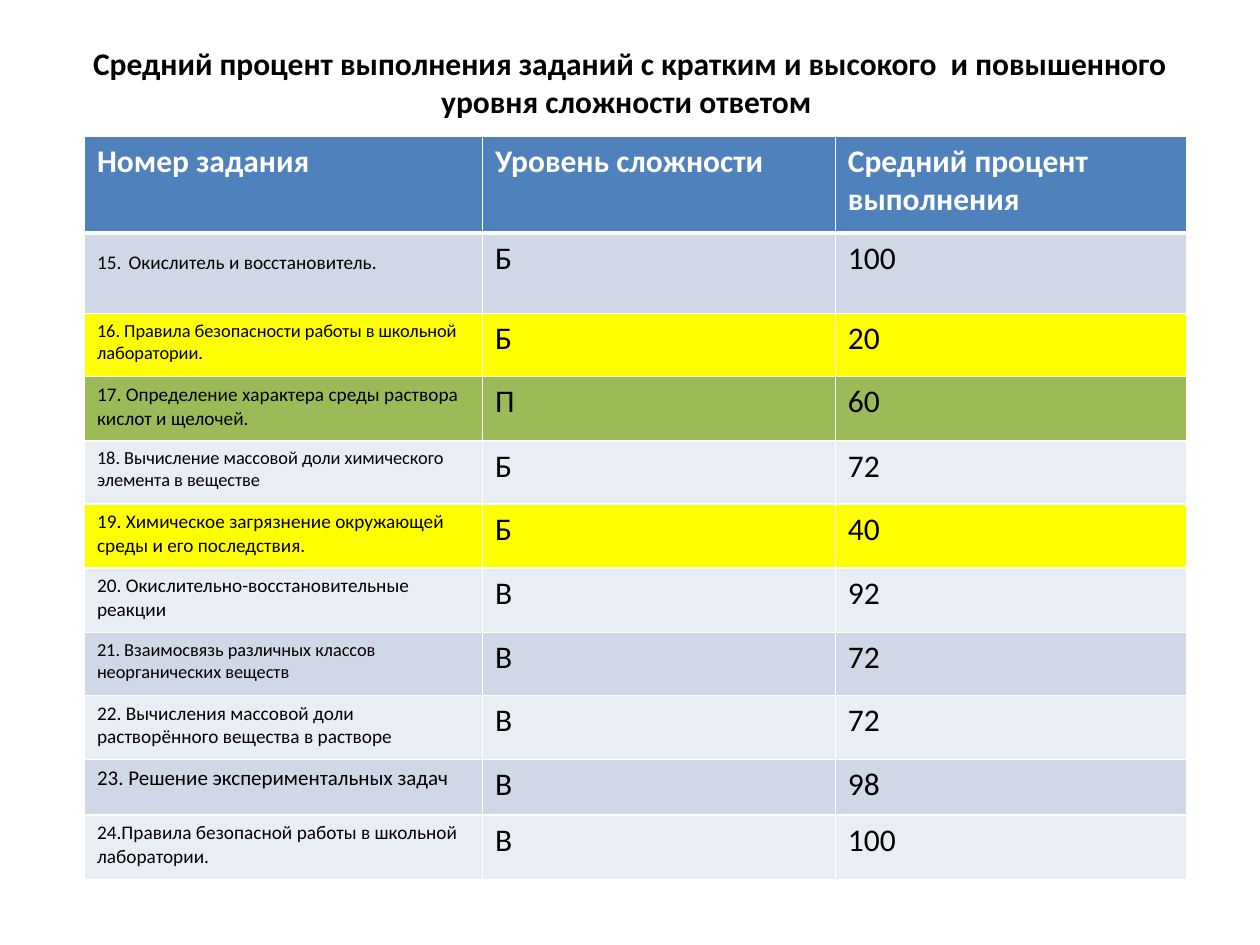
from dataclasses import dataclass

from lxml import etree
from pptx import Presentation
from pptx.dml.color import RGBColor
from pptx.enum import text
from pptx.oxml import ns
from pptx.util import Inches, Pt


@dataclass(frozen=True)
class Theme:
    font: str = "Calibri"
    size: float = 18
    black: str = "000000"
    white: str = "FFFFFF"
    head: str = "4F81BD"
    bands: tuple = ("D0D8E8", "E9EDF4")
    low: str = "FFFF00"
    raised: str = "9BBB59"


THEME = Theme()
TITLE = ("Средний процент выполнения заданий с кратким и высокого  "
         "и повышенного уровня сложности ответом ")
HEADS = ("Номер задания", "Уровень сложности", "Средний процент выполнения")
WIDTHS = (3.16, 2.8, 2.79)
HEAD_TALL, FIRST_TALL = 0.77, 0.64
TALL = {10.5: 0.5, 11: 0.51, 12: 0.44}  # row height by task type size
TASKS = (
    ("15. Окислитель и восстановитель.", 11, "Б", 100),
    ("16. Правила безопасности работы в школьной лаборатории.", 10.5, "Б", 20),
    ("17. Определение характера среды раствора кислот и щелочей.", 11, "П", 60),
    ("18. Вычисление массовой доли химического элемента в веществе", 10.5, "Б", 72),
    ("19. Химическое загрязнение окружающей среды и его последствия.", 11, "Б", 40),
    ("20. Окислительно-восстановительные реакции", 11, "В", 92),
    ("21. Взаимосвязь различных классов\nнеорганических веществ", 10.5, "В", 72),
    ("22. Вычисления массовой доли растворённого вещества в растворе", 11, "В", 72),
    ("23. Решение экспериментальных задач", 12, "В", 98),
    ("24.Правила безопасной работы в школьной лаборатории.", 11, "В", 100),
)


def style(para, size=THEME.size, color=THEME.black, bold=False):
    font = para.font
    font.name, font.size, font.bold = THEME.font, Pt(size), bold
    font.color.rgb = RGBColor.from_string(color)


def add_title(slide):
    title = slide.shapes.title
    title.left, title.top = Inches(0.5), Inches(0.3)
    title.width, title.height = Inches(9), Inches(0.7)
    frame = title.text_frame
    frame.text = TITLE
    frame.word_wrap = True
    frame.vertical_anchor = text.MSO_ANCHOR.MIDDLE
    para = frame.paragraphs[0]
    para.alignment = text.PP_ALIGN.CENTER
    style(para, bold=True)


def set_edges(cell, top=1, bottom=1):
    """Draw white borders; must run before the cell is filled."""
    props = cell._tc.get_or_add_tcPr()
    for side, width in (("L", 1), ("R", 1), ("T", top), ("B", bottom)):
        line = etree.SubElement(props, ns.qn(f"a:ln{side}"), w=str(Pt(width)))
        fill = etree.SubElement(line, ns.qn("a:solidFill"))
        etree.SubElement(fill, ns.qn("a:srgbClr"), val=THEME.white)


def fill_cell(cell, words, fill, top=1, bottom=1, **look):
    set_edges(cell, top, bottom)
    cell.fill.solid()
    cell.fill.fore_color.rgb = RGBColor.from_string(fill)
    cell.text = words
    for para in cell.text_frame.paragraphs:
        style(para, **look)


def split_number(cell):
    """Put a full-size space between the task number and its name."""
    para = cell.text_frame.paragraphs[0]
    number, name = para.text.split(" ", 1)
    para.clear()
    for part in (number, " ", name):
        run = para.add_run()
        run.text = part
        if part == " ":
            run.font.size = Pt(THEME.size)


def row_fill(index, level, percent):
    if percent < 50:
        return THEME.low
    return THEME.raised if level == "П" else THEME.bands[index % 2]


def add_tasks(slide):
    talls = [HEAD_TALL, FIRST_TALL] + [TALL[task[1]] for task in TASKS[1:]]
    table = slide.shapes.add_table(
        len(talls), len(WIDTHS), Inches(0.67), Inches(1.08),
        Inches(sum(WIDTHS)), Inches(sum(talls))).table
    for column, width in zip(table.columns, WIDTHS):
        column.width = Inches(width)
    for row, tall in zip(table.rows, talls):
        row.height = Inches(tall)

    for col, head in enumerate(HEADS):
        fill_cell(table.cell(0, col), head, THEME.head, bottom=3,
                  color=THEME.white, bold=True)
    for index, (name, size, level, percent) in enumerate(TASKS):
        fill = row_fill(index, level, percent)
        top = 1 if index else 3
        sizes = (size, THEME.size, THEME.size)
        for col, words in enumerate((name, level, str(percent))):
            fill_cell(table.cell(index + 1, col), words, fill, top,
                      size=sizes[col])
    split_number(table.cell(1, 0))


def main():
    deck = Presentation()
    deck.slide_width, deck.slide_height = Inches(10), Inches(7.5)
    slide = deck.slides.add_slide(deck.slide_layouts[5])
    add_title(slide)
    add_tasks(slide)
    deck.save("out.pptx")


if __name__ == "__main__":
    main()
